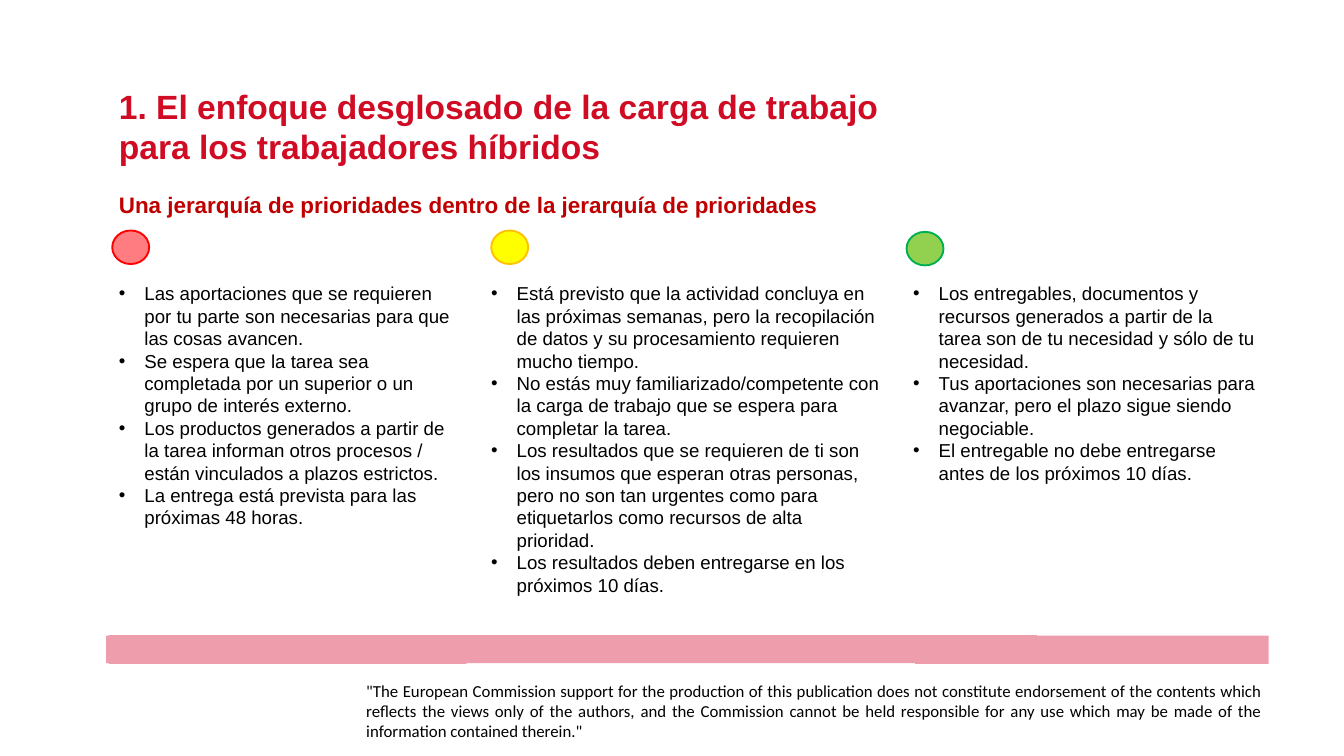
from dataclasses import dataclass

from lxml.etree import SubElement
from pptx import Presentation
from pptx.dml.color import RGBColor
from pptx.enum.shapes import MSO_SHAPE
from pptx.enum.text import PP_ALIGN
from pptx.oxml.ns import qn
from pptx.util import Inches, Pt


@dataclass(frozen=True)
class Theme:
    title: str = "D00B24"
    sub: str = "C00000"
    ink: str = "000000"
    band: str = "ED9DAB"
    font: str = "Arial"
    note_font: str = "Calibri"
    title_size: int = 36
    sub_size: int = 24
    body_size: int = 20
    note_size: int = 18


THEME = Theme()
LEFT = 1.67

# Each column: text left, width, height, dot left, dot top, dot fill, dot line, items
COLUMNS = [
    (LEFT, 5.29, 3.77, LEFT, 3.43, "FF7C80", "FF0000", [
        "Las aportaciones que se requieren por tu parte son necesarias para que las cosas avancen.",
        "Se espera que la tarea sea completada por un superior o un grupo de interés externo.",
        "Los productos generados a partir de la tarea informan otros procesos / están vinculados a plazos estrictos.",
        "La entrega está prevista para las próximas 48 horas.",
    ]),
    (7.21, 6.01, 4.77, 7.31, 3.43, "FFFF00", "FFC000", [
        "Está previsto que la actividad concluya en las próximas semanas, pero la recopilación de datos y su procesamiento requieren mucho tiempo.",
        "No estás muy familiarizado/competente con la carga de trabajo que se espera para completar la tarea.",
        "Los resultados que se requieren de ti son los insumos que esperan otras personas, pero no son tan urgentes como para etiquetarlos como recursos de alta prioridad.",
        "Los resultados deben entregarse en los próximos 10 días.",
    ]),
    (13.49, 5.29, 3.1, 13.49, 3.45, "92D050", "00B050", [
        "Los entregables, documentos y recursos generados a partir de la tarea son de tu necesidad y sólo de tu necesidad.",
        "Tus aportaciones son necesarias para avanzar, pero el plazo sigue siendo negociable.",
        "El entregable no debe entregarse antes de los próximos 10 días.",
    ]),
]

NOTE = (
    '"The European Commission support for the production of this publication '
    "does not constitute endorsement of the contents which reflects the views "
    "only of the authors, and the Commission cannot be held responsible for any "
    'use which may be made of the information contained therein."'
)


def rgb(code):
    return RGBColor.from_string(code)


def add_frame(slide, left, top, width, height):
    box = slide.shapes.add_textbox(*map(Inches, (left, top, width, height)))
    box.text_frame.word_wrap = True
    return box.text_frame


def add_run(para, text, size, color, font=THEME.font, bold=False):
    run = para.add_run()
    run.text = text
    run.font.name = font
    run.font.size = Pt(size)
    run.font.bold = bold
    run.font.color.rgb = rgb(color)


def add_bullet(para):
    """Give the paragraph a round bullet and a hanging indent."""
    props = para._p.get_or_add_pPr()
    props.set("marL", str(Inches(0.38)))
    props.set("indent", str(-Inches(0.38)))
    tint = SubElement(props, qn("a:buClr"))
    SubElement(tint, qn("a:srgbClr"), val=THEME.ink)
    SubElement(props, qn("a:buFont"), typeface=THEME.font)
    SubElement(props, qn("a:buChar"), char="•")


def add_list(slide, left, width, height, items):
    frame = add_frame(slide, left, 4.15, width, height)
    for i, item in enumerate(items):
        para = frame.add_paragraph() if i else frame.paragraphs[0]
        add_bullet(para)
        add_run(para, item, THEME.body_size, THEME.ink)


def add_dot(slide, left, top, fill, line):
    dot = slide.shapes.add_shape(
        MSO_SHAPE.OVAL, Inches(left), Inches(top), Inches(0.55), Inches(0.5))
    dot.shadow.inherit = False
    dot.fill.solid()
    dot.fill.fore_color.rgb = rgb(fill)
    dot.line.color.rgb = rgb(line)
    dot.line.width = Pt(2)


def add_band(slide):
    """Draw the bar above the note, with its slightly stepped edges."""
    points = [
        (18.88, 9.46), (15.43, 9.46), (15.43, 9.45), (1.62, 9.45),
        (1.62, 9.46), (1.58, 9.46), (1.58, 9.87), (1.62, 9.87),
        (1.62, 9.88), (6.94, 9.88), (6.94, 9.87), (13.62, 9.87),
        (13.62, 9.88), (18.88, 9.88),
    ]
    start, *rest = [(Inches(x), Inches(y)) for x, y in points]
    path = slide.shapes.build_freeform(*start)
    path.add_line_segments(rest, close=True)
    band = path.convert_to_shape()
    band.shadow.inherit = False
    band.fill.solid()
    band.fill.fore_color.rgb = rgb(THEME.band)
    band.line.fill.background()


def add_note(slide):
    frame = add_frame(slide, 5.45, 10.15, 13.33, 0.76)
    frame.margin_left = frame.margin_right = 0
    frame.margin_top = frame.margin_bottom = 0
    para = frame.paragraphs[0]
    para.alignment = PP_ALIGN.JUSTIFY
    para.line_spacing = 0.98
    add_run(para, NOTE, THEME.note_size, THEME.ink, THEME.note_font)


def add_head(slide, text, top, width, height, size, color):
    frame = add_frame(slide, LEFT, top, width, height)
    add_run(frame.paragraphs[0], text, size, color, bold=True)


def main():
    deck = Presentation()
    deck.slide_width, deck.slide_height = Inches(20), Inches(11.25)
    slide = deck.slides.add_slide(deck.slide_layouts[6])

    add_band(slide)
    add_note(slide)
    add_head(slide, "Una jerarquía de prioridades dentro de la jerarquía de prioridades",
             2.8, 17.11, 0.5, THEME.sub_size, THEME.sub)
    for left, width, height, x, y, fill, line, items in COLUMNS:
        add_list(slide, left, width, height, items)
        add_dot(slide, x, y, fill, line)
    add_head(slide, "1. El enfoque desglosado de la carga de trabajo para los trabajadores híbridos",
             1.23, 12.41, 1.31, THEME.title_size, THEME.title)

    deck.save("out.pptx")


if __name__ == "__main__":
    main()
